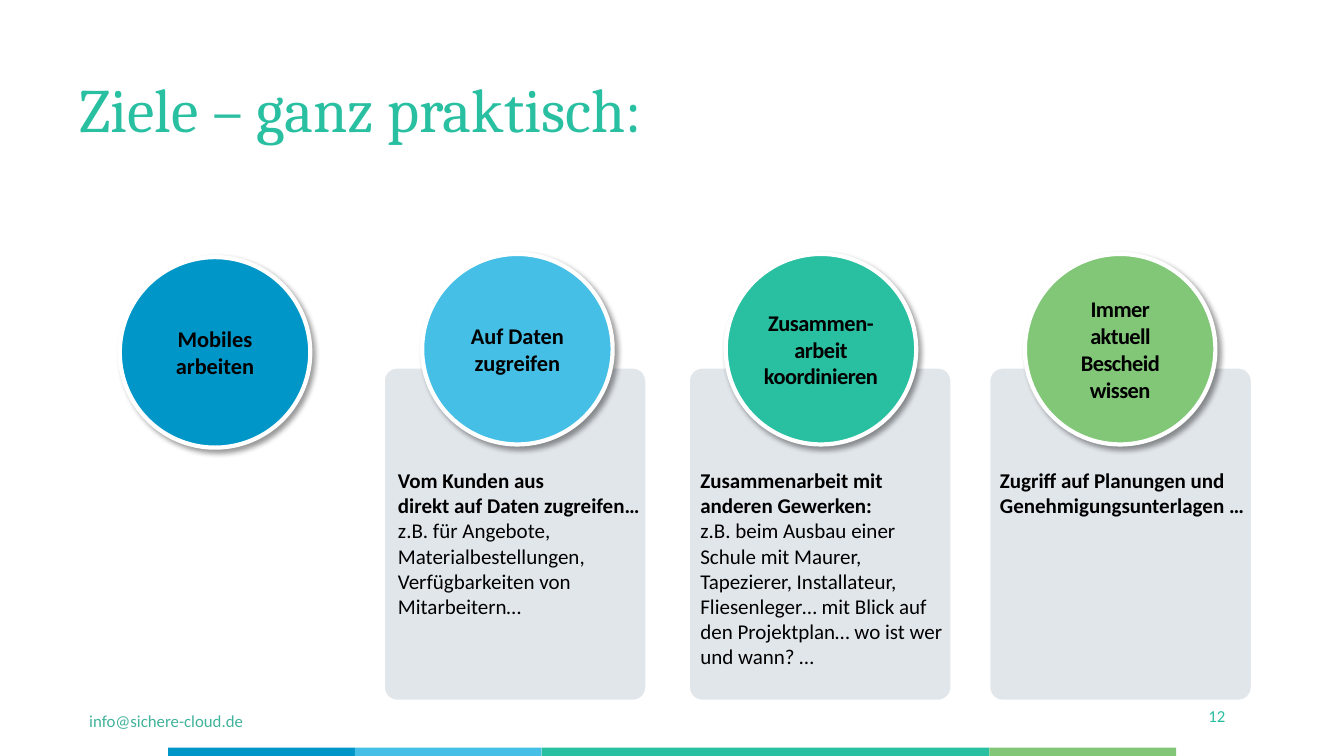
import pptx
import pptx.util
import pptx.dml.color
import pptx.enum.shapes
import pptx.enum.text
import pptx.oxml
import pptx.oxml.ns

Cm, Pt = pptx.util.Cm, pptx.util.Pt
SHAPE = pptx.enum.shapes.MSO_SHAPE
ALIGN = pptx.enum.text.PP_ALIGN
ANCHOR = pptx.enum.text.MSO_ANCHOR

COLORS = {"blue": "0096C7", "sky": "45BFE5", "teal": "29BFA1", "green": "82C778",
          "panel": "E1E6EB", "white": "FFFFFF", "black": "000000", "mail": "40B39B"}
CIRCLE = 4.8
PANEL = (6.6, 8.38)
PANEL_TOP = 9.27

COLUMNS = [
    {"circle": (3.02, 6.48), "color": "blue", "label": "Mobiles arbeiten"},
    {"circle": (10.64, 6.4), "color": "sky", "label": "Auf Daten zugreifen",
     "panel": 9.68, "indent": 0.35,
     "head": "Vom Kunden aus\vdirekt auf Daten zugreifen…",
     "body": "z.B. für Angebote, Materialbestellungen, Verfügbarkeiten von Mitarbeitern…"},
    {"circle": (18.29, 6.4), "color": "teal", "label": "Zusammen-\varbeit\nkoordinieren",
     "spacing": -30, "panel": 17.37, "indent": 0.28,
     "head": "Zusammenarbeit mit anderen Gewerken:",
     "body": "z.B. beim Ausbau einer Schule mit Maurer, Tapezierer, Installateur, "
             "Fliesenleger… mit Blick auf den Projektplan… wo ist wer und wann? …"},
    {"circle": (25.83, 6.4), "color": "green", "label": "Immer\naktuell Bescheid wissen",
     "spacing": -40, "panel": 24.94, "indent": 0.26,
     "head": "Zugriff auf Planungen und Genehmigungsunterlagen …"},
]


def rgb(name):
    """Return the named colour."""
    return pptx.dml.color.RGBColor.from_string(COLORS[name])


def style(p, size, color, bold=False, font="Calibri", align=ALIGN.LEFT):
    """Format a whole paragraph."""
    p.alignment = align
    p.font.size, p.font.bold, p.font.name = Pt(size), bold, font
    p.font.color.rgb = rgb(color)


def set_frame(tf, margins=(0, 0, 0, 0), anchor=ANCHOR.TOP):
    """Set wrapping, margins and anchor of a text frame."""
    tf.word_wrap = True
    tf.auto_size = pptx.enum.text.MSO_AUTO_SIZE.NONE
    tf.vertical_anchor = anchor
    tf.margin_left, tf.margin_top, tf.margin_right, tf.margin_bottom = map(Cm, margins)


def add_filled(s, kind, box, color, line=0):
    """Add a flat shape with an optional white outline."""
    sp = s.shapes.add_shape(kind, *map(Cm, box))
    sp.shadow.inherit = False
    sp.fill.solid()
    sp.fill.fore_color.rgb = rgb(color)
    if line:
        sp.line.color.rgb = rgb("white")
        sp.line.width = Pt(line)
    else:
        sp.line.fill.background()
    return sp


def add_shadow(sp):
    """Give a shape a soft shadow to the lower right."""
    effects = sp._element.spPr.find(pptx.oxml.ns.qn("a:effectLst"))
    effects.append(pptx.oxml.parse_xml(
        f'<a:outerShdw {pptx.oxml.ns.nsdecls("a")} blurRad="{Pt(4)}" dist="{Pt(3)}" '
        'dir="2700000" algn="tl" rotWithShape="0"><a:srgbClr val="000000">'
        '<a:alpha val="40000"/></a:srgbClr></a:outerShdw>'))


def add_panel(s, left, top, indent, head, body=None):
    """Add a rounded panel with a bold heading and optional body text."""
    width, height = PANEL
    sp = add_filled(s, SHAPE.ROUNDED_RECTANGLE, (left, top, width, height), "panel", 1)
    sp.adjustments[0] = 0.05
    box = (left + indent, top + 2.36, width - indent + 0.05, height - 2.6)
    tf = s.shapes.add_textbox(*map(Cm, box)).text_frame
    set_frame(tf, (0, 0.15, 0, 0))
    p = tf.paragraphs[0]
    p.text = head
    style(p, 15, "black", True)
    if body:
        p = tf.add_paragraph()
        p.text = body
        style(p, 15, "black")


def add_circle(s, left, top, color, label, spacing=0):
    """Add a labelled circle with a white rim and a shadow."""
    sp = add_filled(s, SHAPE.OVAL, (left, top, CIRCLE, CIRCLE), color, 3)
    add_shadow(sp)
    tf = sp.text_frame
    set_frame(tf, anchor=ANCHOR.MIDDLE)
    tf.text = label
    for p in tf.paragraphs:
        style(p, 16, "black", True, align=ALIGN.CENTER)
        for r in p.runs:
            r._r.get_or_add_rPr().set("spc", str(spacing))


def add_column(s, column):
    """Add one goal: its panel, if any, and its circle."""
    if "panel" in column:
        add_panel(s, column["panel"], PANEL_TOP, column["indent"],
                  column["head"], column.get("body"))
    add_circle(s, *column["circle"], column["color"], column["label"],
               column.get("spacing", 0))


def add_title(s, left, top, width, height):
    """Place and format the title."""
    sp = s.shapes.title
    sp.left, sp.top, sp.width, sp.height = map(Cm, (left, top, width, height))
    set_frame(sp.text_frame)
    p = sp.text_frame.paragraphs[0]
    p.text = "Ziele – ganz praktisch:"
    p.line_spacing = 0.9
    style(p, 44, "teal", font="Cambria")


def add_footer(s, left, top, width):
    """Add the address, the page number and the colour bar."""
    notes = [("info@sichere-cloud.de", (2, 17.65, 11.43, 1.02), "mail", ALIGN.LEFT),
             ("12", (30.02, 17.65, 1.3, 0.79), "teal", ALIGN.CENTER)]
    for text, box, color, align in notes:
        tf = s.shapes.add_textbox(*map(Cm, box)).text_frame
        set_frame(tf, (0.25, 0.13, 0.25, 0.13), ANCHOR.MIDDLE)
        p = tf.paragraphs[0]
        p.text = text
        style(p, 12, color, align=align)
    unit = width / 5.4
    for color, share in (("blue", 1), ("sky", 1), ("teal", 2.4), ("green", 1)):
        add_filled(s, SHAPE.RECTANGLE, (left, top, share * unit, 0.21), color)
        left += share * unit


def main():
    """Build the slide and save it."""
    prs = pptx.Presentation()
    prs.slide_width, prs.slide_height = Cm(33.87), Cm(19.05)
    s = prs.slides.add_slide(prs.slide_layouts[5])
    add_title(s, 2, 2, 25.5, 2.08)
    for column in COLUMNS:
        add_column(s, column)
    add_footer(s, 4.24, 18.84, 25.4)
    prs.save("out.pptx")


if __name__ == "__main__":
    main()
